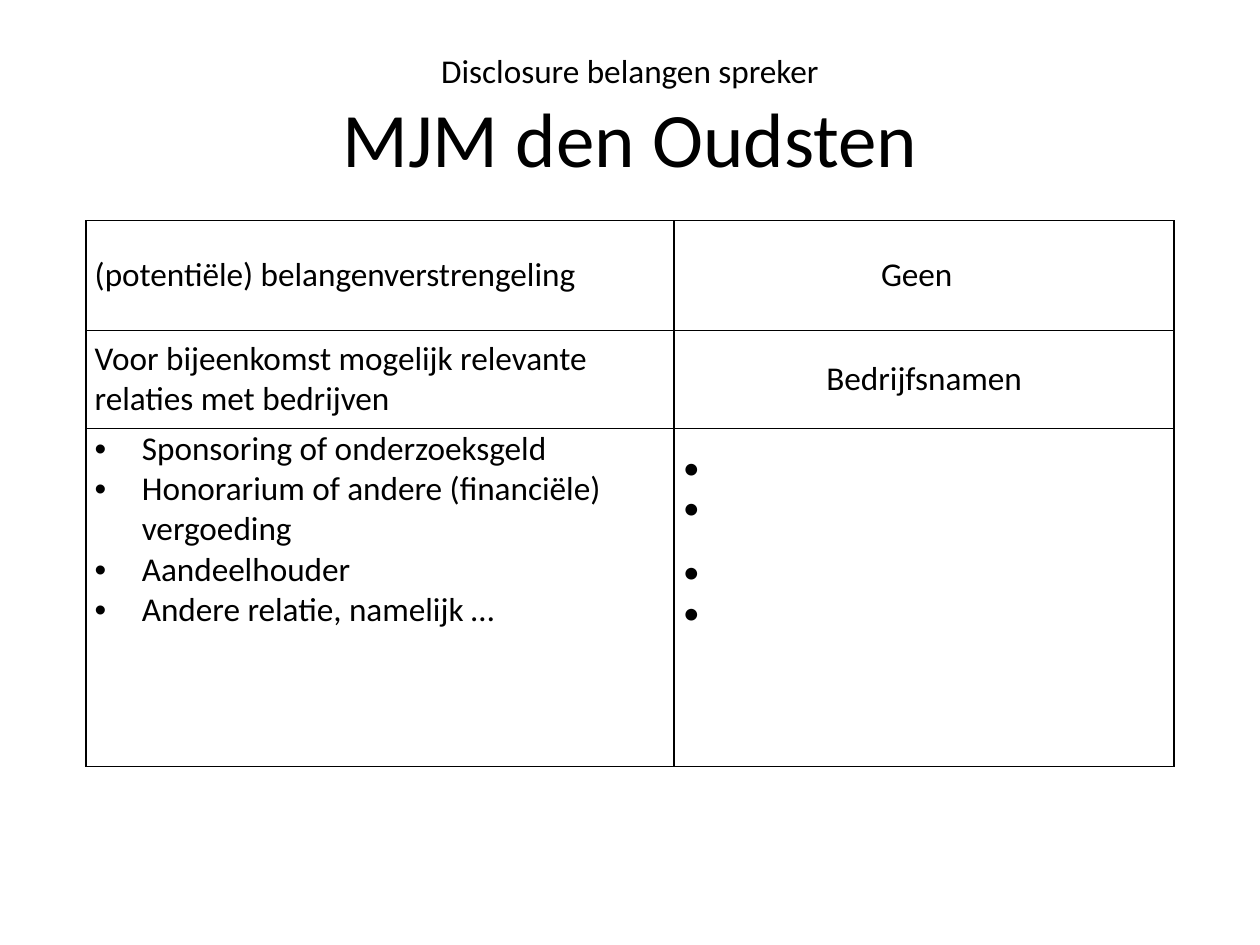
import pptx
import pptx.util
import pptx.dml.color
import pptx.enum.text
from lxml import etree
from pptx.oxml.ns import qn

Cm, Pt = pptx.util.Cm, pptx.util.Pt
ALIGN = pptx.enum.text.PP_ALIGN
ANCHOR = pptx.enum.text.MSO_ANCHOR

# Content
TITLE = [("Disclosure belangen spreker", 19), ("MJM den Oudsten", 44)]
ROWS = [
    ("(potentiële) belangenverstrengeling", "Geen \u00a0"),
    ("Voor bijeenkomst mogelijk relevante relaties met bedrijven", "Bedrijfsnamen"),
]
RELATIONS = [
    "Sponsoring of onderzoeksgeld",
    "Honorarium of andere (financiële) vergoeding",
    "Aandeelhouder",
    "Andere relatie, namelijk …",
]
ANSWERS = [("•", 0), ("•", 0), ("•", 13.5), ("•", 0)]  # text, space before
COLS = [11.86, 10.08]
HEIGHTS = [2.21, 1.98, 6.81]
BLACK = "000000"


def color(hex_value):
    return pptx.dml.color.RGBColor.from_string(hex_value)


def write(p, text, size=19, align=ALIGN.LEFT, before=0, bullet=False):
    p.alignment = align
    p.space_before = Pt(before)
    r = p.add_run()
    r.text = text
    r.font.size = Pt(size)
    r.font.name = "Calibri"
    r.font.color.rgb = color(BLACK)
    if bullet:
        pPr = p._p.get_or_add_pPr()
        pPr.set("marL", str(Cm(0.95)))
        pPr.set("indent", str(-Cm(0.95)))
        etree.SubElement(pPr, qn("a:buFont")).set("typeface", "Arial")
        etree.SubElement(pPr, qn("a:buChar")).set("char", "•")


def fill_cell(cell, items, anchor=ANCHOR.MIDDLE, top=0):
    """Write one paragraph per (text, format) item and draw the borders."""
    cell.margin_left = cell.margin_right = Cm(0.18)
    cell.margin_top, cell.margin_bottom = Cm(top), 0
    cell.vertical_anchor = anchor
    tf = cell.text_frame
    for i, (text, fmt) in enumerate(items):
        write(tf.add_paragraph() if i else tf.paragraphs[0], text, **fmt)
    tcPr = cell._tc.get_or_add_tcPr()
    for side in ("a:lnL", "a:lnR", "a:lnT", "a:lnB"):
        ln = etree.SubElement(tcPr, qn(side), w=str(Pt(1)))
        solid = etree.SubElement(ln, qn("a:solidFill"))
        etree.SubElement(solid, qn("a:srgbClr"), val=BLACK)
    cell.fill.background()


prs = pptx.Presentation()
prs.slide_width, prs.slide_height = Cm(25.4), Cm(19.05)
s = prs.slides.add_slide(prs.slide_layouts[5])

# Title
title = s.shapes.title
title.left, title.top, title.width, title.height = Cm(1.27), Cm(0.76), Cm(22.86), Cm(3.18)
tf = title.text_frame
tf.vertical_anchor = ANCHOR.MIDDLE
p = tf.paragraphs[0]
for i, (text, size) in enumerate(TITLE):
    if i:
        p.add_line_break()
    write(p, text, size=size, align=ALIGN.CENTER)

# Table
table = s.shapes.add_table(len(HEIGHTS), len(COLS), Cm(1.73), Cm(4.45),
                           Cm(sum(COLS)), Cm(sum(HEIGHTS))).table
table.first_row = table.horz_banding = False
for col, width in zip(table.columns, COLS):
    col.width = Cm(width)
for row, height in zip(table.rows, HEIGHTS):
    row.height = Cm(height)

for i, (label, answer) in enumerate(ROWS):
    fill_cell(table.cell(i, 0), [(label, {})])
    fill_cell(table.cell(i, 1), [(answer, {"align": ALIGN.CENTER})])
fill_cell(table.cell(2, 0), [(t, {"bullet": True}) for t in RELATIONS], ANCHOR.TOP)
fill_cell(table.cell(2, 1), [(t, {"before": b}) for t, b in ANSWERS], ANCHOR.TOP, top=0.39)

prs.save("out.pptx")
